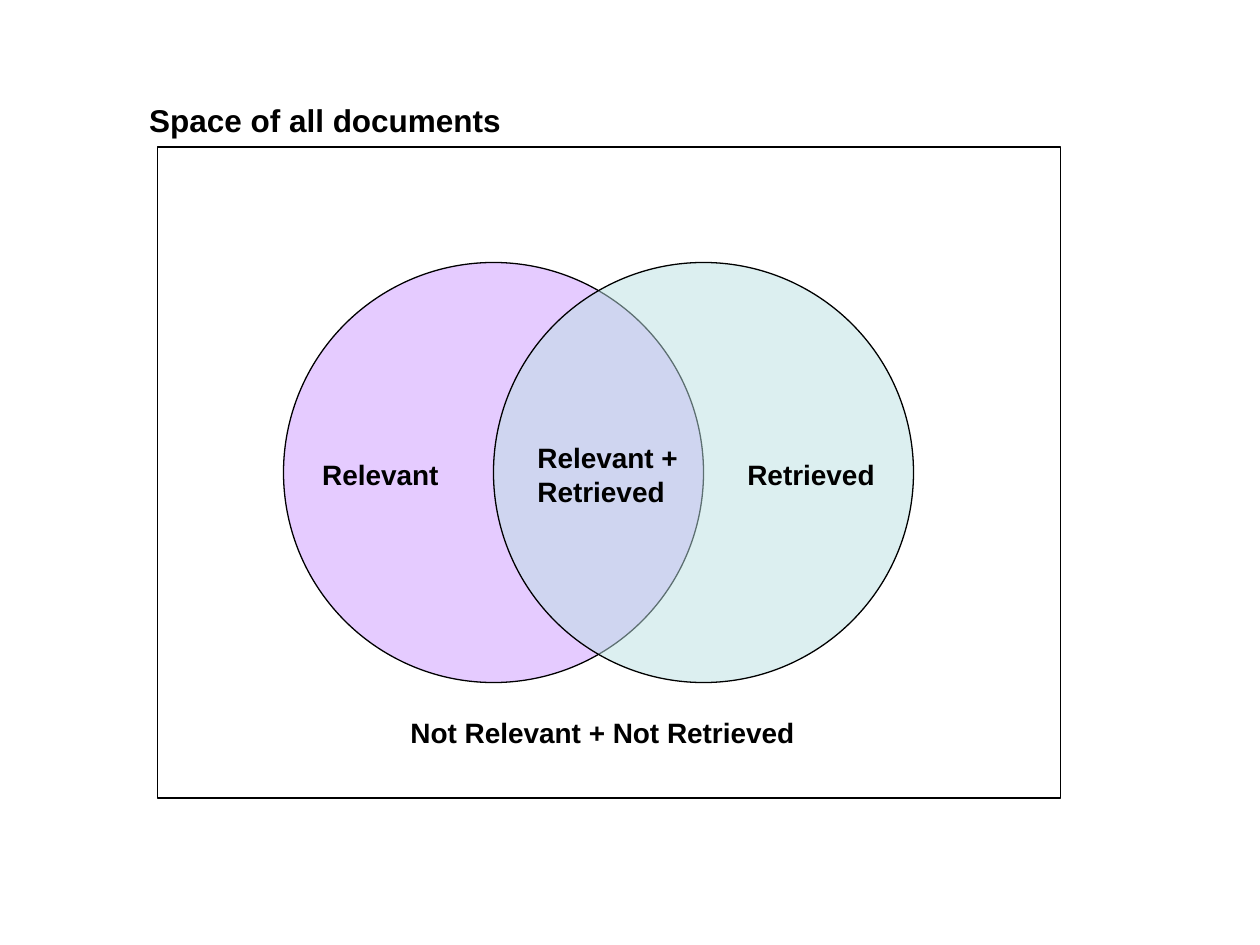
import pptx
import pptx.dml.color
import pptx.enum.shapes
import pptx.enum.text
import pptx.oxml
import pptx.oxml.ns
import pptx.util

Pt = pptx.util.Pt
SHAPES = pptx.enum.shapes.MSO_SHAPE
BLACK = "000000"


def color(hex_string):
    return pptx.dml.color.RGBColor.from_string(hex_string)


def place(shape, box):
    shape.left, shape.top, shape.width, shape.height = map(Pt, box)


def write_text(shape, text, size=16, bold=True, font="Arial", text_color=BLACK, wrap=False):
    frame = shape.text_frame
    frame.text = text
    frame.word_wrap = wrap
    frame.auto_size = pptx.enum.text.MSO_AUTO_SIZE.SHAPE_TO_FIT_TEXT
    frame.vertical_anchor = pptx.enum.text.MSO_ANCHOR.TOP
    for paragraph in frame.paragraphs:
        paragraph.alignment = pptx.enum.text.PP_ALIGN.LEFT
        paragraph.font.name = font
        paragraph.font.size = Pt(size)
        paragraph.font.bold = bold
        paragraph.font.color.rgb = color(text_color)


def add_label(slide, text, box):
    label = slide.shapes.add_textbox(*map(Pt, box))
    write_text(label, text)


def add_outlined(slide, kind, box, fill=None, opacity=100):
    """Add a thin black outline, filled at the given opacity in percent."""
    shape = slide.shapes.add_shape(kind, *map(Pt, box))
    shape.shadow.inherit = False
    shape.line.color.rgb = color(BLACK)
    shape.line.width = Pt(0.75)
    if fill is None:
        shape.fill.background()
        return
    shape.fill.solid()
    shape.fill.fore_color.rgb = color(fill)
    fill_color = shape.element.spPr.find(".//" + pptx.oxml.ns.qn("a:srgbClr"))
    alpha = pptx.oxml.parse_xml(
        f'<a:alpha {pptx.oxml.ns.nsdecls("a")} val="{opacity * 1000}"/>'
    )
    fill_color.append(alpha)


def add_title(slide, text, box):
    title = slide.shapes.title
    place(title, box)
    write_text(title, text, size=18, wrap=True)


def add_venn(slide, box):
    """Draw two circles as tall as the box, at its left and right ends."""
    left, top, width, diameter = box
    second_left = left + width - diameter
    for circle_left, fill in ((left, "CC99FF"), (second_left, "BBE0E3")):
        add_outlined(slide, SHAPES.OVAL, (circle_left, top, diameter, diameter),
                     fill=fill, opacity=50)
    add_label(slide, "Relevant", (left + 15, top + 108, 81.5, 26.6))
    add_label(slide, "Retrieved", (second_left + 138, top + 108, 87.2, 26.6))
    add_label(slide, "Relevant +\nRetrieved", (second_left + 18, top + 98.4, 95, 46))


def add_document_space(slide, box):
    left, top, width, height = box
    add_outlined(slide, SHAPES.RECTANGLE, box)
    add_venn(slide, (left + 72, top + 66, 360, 240))
    add_label(slide, "Not Relevant + Not Retrieved",
              (left + 137.5, top + height - 50.6, 234.7, 26.6))


def main():
    presentation = pptx.Presentation()
    presentation.slide_width, presentation.slide_height = Pt(720), Pt(540)
    slide = presentation.slides.add_slide(presentation.slide_layouts.get_by_name("Title Only"))
    add_title(slide, "Space of all documents", (78, 54, 222, 29))
    add_document_space(slide, (90, 84, 516, 372))
    presentation.save("out.pptx")


if __name__ == "__main__":
    main()
